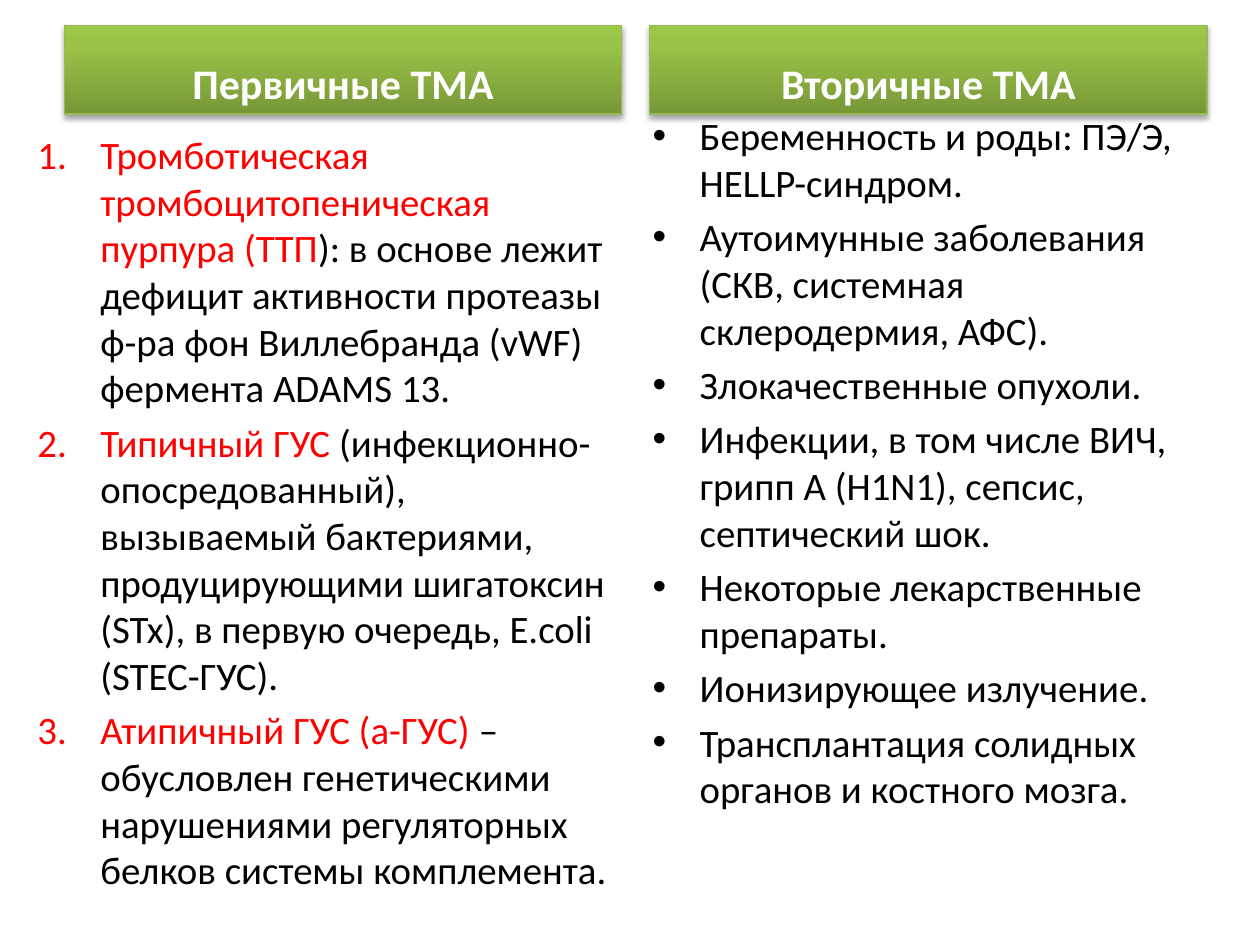
from lxml import etree
from pptx import Presentation
from pptx.dml.color import RGBColor
from pptx.enum.text import MSO_ANCHOR, MSO_AUTO_SIZE, PP_ALIGN
from pptx.oxml import parse_xml
from pptx.oxml.ns import nsdecls, qn
from pptx.util import Cm, Pt

CENTER, LEFT = PP_ALIGN.CENTER, PP_ALIGN.LEFT
BOTTOM, NO_AUTOFIT = MSO_ANCHOR.BOTTOM, MSO_AUTO_SIZE.NONE
FONT = "Calibri"
RED = RGBColor(0xFF, 0x00, 0x00)
BLACK = RGBColor(0x00, 0x00, 0x00)
WHITE = RGBColor(0xFF, 0xFF, 0xFF)
HEADER_LINE = RGBColor(0x98, 0xB9, 0x55)
HEADER_STOPS = [
    (0, RGBColor(0x77, 0x97, 0x37)),
    (80, RGBColor(0x9B, 0xC3, 0x48)),
    (100, RGBColor(0x9D, 0xC7, 0x46)),
]

# Content: each list item is a pair of highlighted start and plain rest
PRIMARY = [
    ("Тромботическая тромбоцитопеническая пурпура (ТТП",
     "): в основе лежит дефицит активности протеазы ф-ра фон Виллебранда (vWF) "
     "фермента ADAMS 13."),
    ("Типичный ГУС ",
     "(инфекционно-опосредованный), вызываемый бактериями, продуцирующими "
     "шигатоксин (STx), в первую очередь, E.coli (STEC-ГУС)."),
    ("Атипичный ГУС (а-ГУС) ",
     "– обусловлен генетическими нарушениями регуляторных белков системы "
     "комплемента."),
]
SECONDARY = [
    ("", "Беременность и роды: ПЭ/Э, HELLP-синдром."),
    ("", "Аутоимунные заболевания (СКВ, системная склеродермия, АФС)."),
    ("", "Злокачественные опухоли."),
    ("", "Инфекции, в том числе ВИЧ, грипп А (H1N1), сепсис, септический шок."),
    ("", "Некоторые лекарственные препараты."),
    ("", "Ионизирующее излучение."),
    ("", "Трансплантация солидных органов и костного мозга."),
]
NUMBERED = ("a:buAutoNum", {"type": "arabicPeriod"})
BULLETED = ("a:buChar", {"char": "•"})

# Columns: header and list placeholder numbers, boxes in cm
HEADER_TOP, HEADER_WIDTH, HEADER_HEIGHT = 0.52, 11.23, 1.78
COLUMNS = [
    {"header": "Первичные ТМА", "holders": (1, 2), "header_left": 1.3,
     "items": PRIMARY, "box": (0.5, 2.51, 12.02, 15.8),
     "marker": NUMBERED, "indent": 1.27},
    {"header": "Вторичные ТМА", "holders": (3, 4), "header_left": 13.1,
     "items": SECONDARY, "box": (12.9, 2.13, 11.23, 14.88),
     "marker": BULLETED, "indent": 0.95},
]


def place(shape, box):
    for side, length in zip(("left", "top", "width", "height"), box):
        setattr(shape, side, Cm(length))


def add_run(paragraph, text, **font):
    run = paragraph.add_run()
    run.text = text
    run.font.color.rgb = font.pop("color")
    for name, value in {"name": FONT, **font}.items():
        setattr(run.font, name, value)


def style_header(shape):
    # Three-stop gradient running from bottom to top
    shape.fill.gradient()
    shape.fill.gradient_angle = 90
    properties = shape.element.spPr
    stops = properties.find(qn("a:gradFill")).find(qn("a:gsLst"))
    for stop in list(stops):
        stops.remove(stop)
    for position, color in HEADER_STOPS:
        stop = etree.SubElement(stops, qn("a:gs"), pos=str(position * 1000))
        etree.SubElement(stop, qn("a:srgbClr"), val=str(color))
    shape.line.color.rgb = HEADER_LINE
    shape.line.width = Pt(0.75)
    # Soft shadow below
    properties.append(parse_xml(
        f'<a:effectLst {nsdecls("a")}><a:outerShdw blurRad="{Pt(3.1)}" '
        f'dist="{Pt(1.8)}" dir="5400000" rotWithShape="0"><a:srgbClr val="000000">'
        '<a:alpha val="35000"/></a:srgbClr></a:outerShdw></a:effectLst>'))


def fill_list(frame, items, marker, indent):
    tag, attributes = marker
    for number, (highlight, rest) in enumerate(items):
        item = frame.add_paragraph() if number else frame.paragraphs[0]
        item.alignment = LEFT
        properties = item._p.get_or_add_pPr()
        properties.set("marL", str(Cm(indent)))
        properties.set("indent", str(-Cm(indent)))
        etree.SubElement(properties, qn("a:buFont"),
                         typeface="+mj-lt" if marker is NUMBERED else "Arial")
        etree.SubElement(properties, qn(tag), attributes)
        for text, color in ((highlight, RED), (rest, BLACK)):
            if text:
                add_run(item, text, size=Pt(22.2), color=color)


deck = Presentation()
deck.slide_width, deck.slide_height = Cm(25.4), Cm(19.05)
slide = deck.slides.add_slide(deck.slide_layouts[4])
holders = {holder.placeholder_format.idx: holder for holder in slide.placeholders}

# The slide has no title
title = slide.shapes.title.element
title.getparent().remove(title)

for column in COLUMNS:
    header, body = (holders[number] for number in column["holders"])

    # Column header
    place(header, (column["header_left"], HEADER_TOP, HEADER_WIDTH, HEADER_HEIGHT))
    style_header(header)
    header.text_frame.auto_size = NO_AUTOFIT
    header.text_frame.vertical_anchor = BOTTOM
    heading = header.text_frame.paragraphs[0]
    heading.alignment = CENTER
    add_run(heading, column["header"], size=Pt(24), bold=True, color=WHITE)

    # Column list
    place(body, column["box"])
    body.text_frame.auto_size = NO_AUTOFIT
    fill_list(body.text_frame, column["items"], column["marker"], column["indent"])

deck.save("out.pptx")
